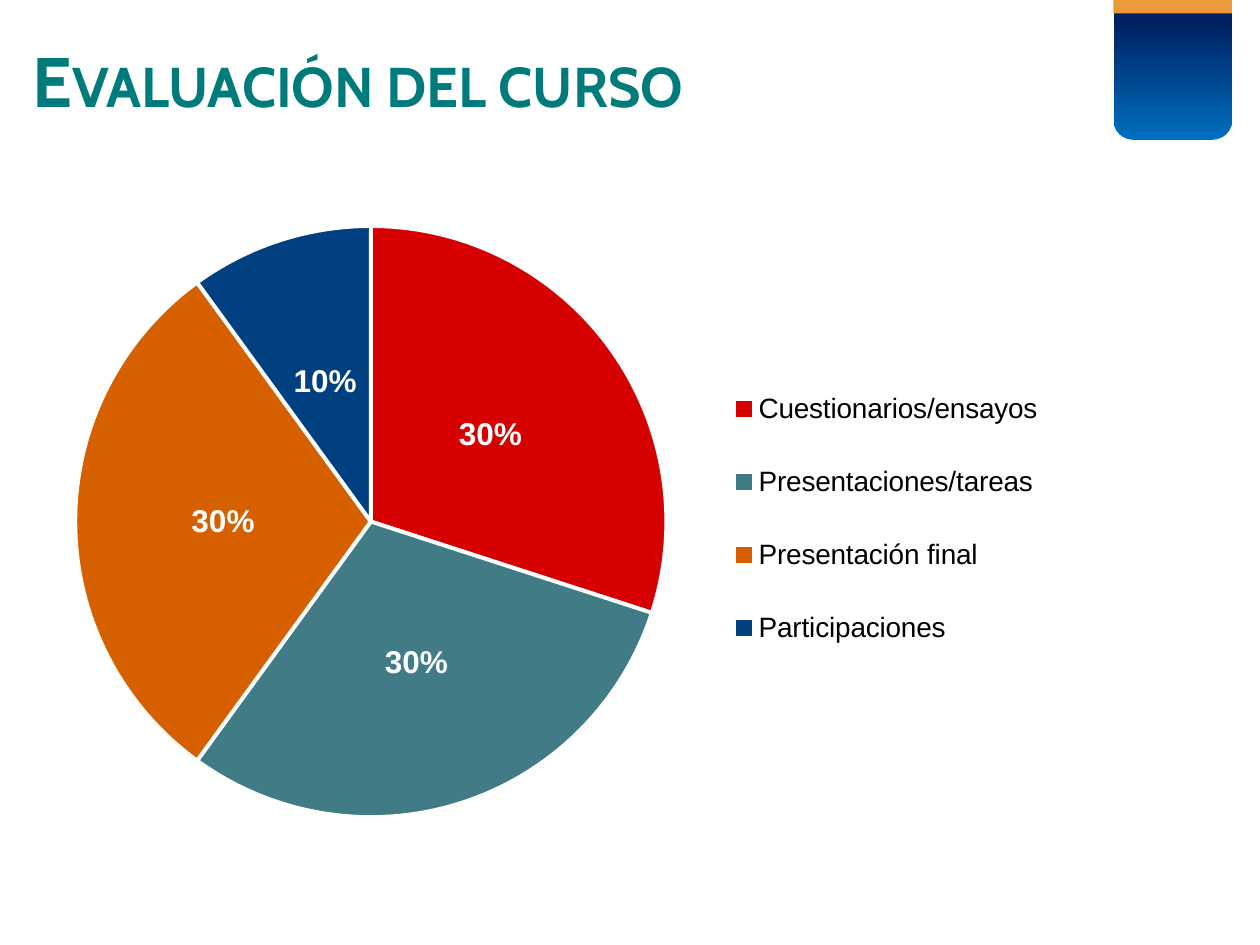
from lxml import etree
from pptx import Presentation
from pptx.chart.data import CategoryChartData
from pptx.dml.color import RGBColor
from pptx.enum.chart import XL_CHART_TYPE, XL_LABEL_POSITION, XL_LEGEND_POSITION
from pptx.enum.shapes import MSO_SHAPE
from pptx.enum.text import MSO_ANCHOR
from pptx.oxml.ns import qn
from pptx.util import Pt

PIE = XL_CHART_TYPE.PIE
CENTER = XL_LABEL_POSITION.CENTER
RIGHT = XL_LEGEND_POSITION.RIGHT
ROUNDED_TOP = MSO_SHAPE.ROUND_2_SAME_RECTANGLE
RECTANGLE = MSO_SHAPE.RECTANGLE
MIDDLE = MSO_ANCHOR.MIDDLE

COLORS = {
    "title": "007B7B", "text": "000000", "white": "FFFFFF",
    "ribbon_light": "0070C0", "ribbon_dark": "002060", "band": "EA9A39",
    "red": "D60000", "teal": "417B85", "orange": "D66000", "navy": "004080",
}
GRADES = [
    ("Cuestionarios/ensayos", 0.3, "red"),
    ("Presentaciones/tareas", 0.3, "teal"),
    ("Presentación final", 0.3, "orange"),
    ("Participaciones", 0.1, "navy"),
]


def color(name):
    return RGBColor.from_string(COLORS[name])


def style_font(font, size, name, tint, bold=False):
    font.size = Pt(size)
    font.name = name
    font.bold = bold
    font.color.rgb = color(tint)


def add_text(page, text, left, top, width, height, small_caps=False, **style):
    box = page.shapes.add_textbox(Pt(left), Pt(top), Pt(width), Pt(height))
    frame = box.text_frame
    frame.word_wrap = True
    frame.vertical_anchor = MIDDLE
    span = frame.paragraphs[0].add_run()
    span.text = text
    style_font(span.font, **style)
    if small_caps:
        span.font._element.set("cap", "small")


def add_plain_shape(page, kind, left, top, width, height):
    shape = page.shapes.add_shape(kind, Pt(left), Pt(top), Pt(width), Pt(height))
    shape.shadow.inherit = False
    shape.line.fill.background()
    return shape


def add_ribbon(page, left, top, width, height):
    """Corner ribbon, rounded at the bottom, with a band across its top."""
    ribbon = add_plain_shape(page, ROUNDED_TOP, left, top, width, height)
    ribbon.rotation = 180
    ribbon.fill.gradient()
    ribbon.fill.gradient_angle = 270
    stops = ((0, "ribbon_light"), (0.85, "ribbon_dark"))
    for stop, (position, tint) in zip(ribbon.fill.gradient_stops, stops):
        stop.position = position
        stop.color.rgb = color(tint)
    band = add_plain_shape(page, RECTANGLE, left, top, width, 8.6)
    band.fill.solid()
    band.fill.fore_color.rgb = color("band")


def set_layout(parent, before, inner=False, **fractions):
    """Place a chart part by fractions of the chart's size."""
    for old in parent.findall(qn("c:layout")):
        parent.remove(old)
    layout = etree.Element(qn("c:layout"))
    manual = etree.SubElement(layout, qn("c:manualLayout"))
    settings = {"layoutTarget": "inner"} if inner else {}
    settings.update(xMode="edge", yMode="edge", **fractions)
    for key, value in settings.items():
        etree.SubElement(manual, qn(f"c:{key}")).set("val", str(value))
    before.addprevious(layout)


def add_grade_pie(page, left, top, width, height):
    data = CategoryChartData(number_format="0%")
    data.categories = [label for label, _, _ in GRADES]
    data.add_series("Series 1", [share for _, share, _ in GRADES])
    chart = page.shapes.add_chart(
        PIE, Pt(left), Pt(top), Pt(width), Pt(height), data).chart
    chart.has_title = False
    style_font(chart.font, 18, "Arial", "text")

    plot = chart.plots[0]
    plot.vary_by_categories = True
    for index, (_, _, tint) in enumerate(GRADES):
        wedge = plot.series[0].points[index].format
        wedge.fill.solid()
        wedge.fill.fore_color.rgb = color(tint)
        wedge.line.color.rgb = color("white")
        wedge.line.width = Pt(2.25)

    labels = plot.series[0].data_labels
    labels.show_value = True
    labels.show_percentage = False
    labels.number_format = "0%"
    labels.number_format_is_linked = False
    labels.position = CENTER
    style_font(labels.font, 18, "Arial", "white", bold=True)

    chart.has_legend = True
    legend = chart.legend
    legend.position = RIGHT
    legend.include_in_layout = False
    style_font(legend.font, 16, "Arial", "text")

    pie = plot._element
    set_layout(pie.getparent(), pie, inner=True, x=0.07, y=0.03, w=0.55, h=0.94)
    overlay = legend._element.find(qn("c:overlay"))
    set_layout(legend._element, overlay, x=0.66, y=0.23, w=0.33, h=0.53)


def main():
    deck = Presentation()
    deck.slide_width, deck.slide_height = Pt(720), Pt(540)
    page = deck.slides.add_slide(deck.slide_layouts[6])
    add_ribbon(page, 636.3, -0.9, 67.7, 80.8)
    add_text(page, "Evaluación del curso", 11.5, 11.5, 618.5, 68.4,
             size=40, name="Cabin", tint="title", bold=True, small_caps=True)
    add_grade_pie(page, 0, 117.4, 614.2, 361.4)
    deck.save("out.pptx")


if __name__ == "__main__":
    main()
